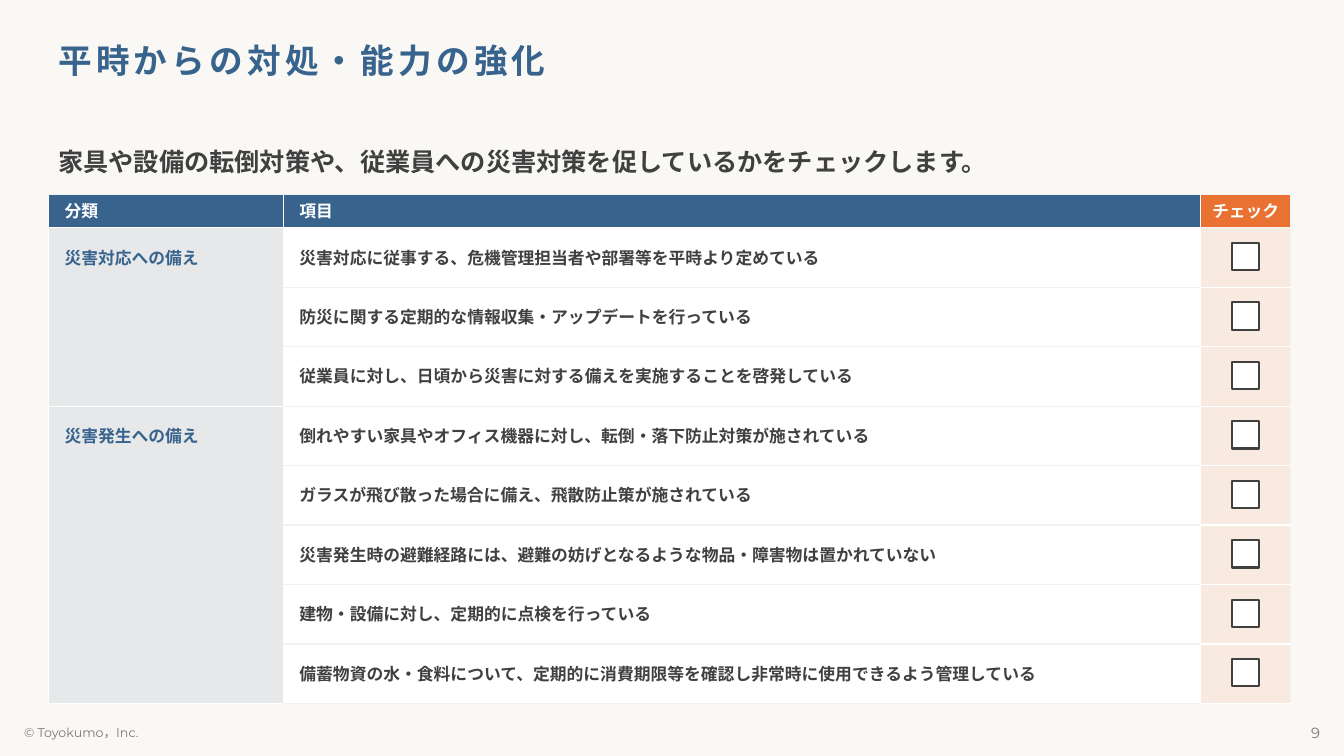
from dataclasses import dataclass

from lxml.etree import SubElement
from pptx import Presentation
from pptx.dml.color import RGBColor
from pptx.enum.shapes import MSO_SHAPE
from pptx.enum.text import MSO_ANCHOR, PP_ALIGN
from pptx.oxml.ns import qn
from pptx.util import Inches, Pt


@dataclass(frozen=True)
class Theme:
    font: str = "Montserrat"
    page: str = "FAF8F4"
    blue: str = "37638D"
    orange: str = "E97132"
    ink: str = "404040"
    grey: str = "797979"
    rule: str = "F2F2F2"
    white: str = "FFFFFF"
    title: float = 24
    lead: float = 18
    body: float = 12
    page_number: float = 10.5
    small: float = 9
    tint: int = 10


T = Theme()
WIDTH, HEIGHT = 13.33, 7.5
LEFT, TABLE_TOP = 0.48, 1.93
COLUMNS = [2.33, 9.1, 0.89]
HEADER_ROW, ROW = 0.33, 0.59
BOX = 0.27
GROUPS = {
    "災害対応への備え": [
        "災害対応に従事する、危機管理担当者や部署等を平時より定めている",
        "防災に関する定期的な情報収集・アップデートを行っている",
        "従業員に対し、日頃から災害に対する備えを実施することを啓発している",
    ],
    "災害発生への備え": [
        "倒れやすい家具やオフィス機器に対し、転倒・落下防止対策が施されている",
        "ガラスが飛び散った場合に備え、飛散防止策が施されている",
        "災害発生時の避難経路には、避難の妨げとなるような物品・障害物は置かれていない",
        "建物・設備に対し、定期的に点検を行っている",
        "備蓄物資の水・食料について、定期的に消費期限等を確認し非常時に使用できるよう管理している",
    ],
}


def rgb(color):
    return RGBColor.from_string(color)


def write(tf, text, size, color, bold=True, align=PP_ALIGN.LEFT, spacing=None):
    tf.text = text
    p = tf.paragraphs[0]
    p.alignment = align
    for r in p.runs:
        r.font.name, r.font.size, r.font.bold = T.font, Pt(size), bold
        r.font.color.rgb = rgb(color)
        rPr = r.font._element
        SubElement(rPr, qn("a:ea")).set("typeface", T.font)
        rPr.set("lang", "ja-JP")
        if spacing:
            rPr.set("spc", str(spacing * 100))
    return p


def add_text(s, text, at, size, color, **style):
    tf = s.shapes.add_textbox(*map(Inches, at)).text_frame
    tf.word_wrap = True
    tf.vertical_anchor = MSO_ANCHOR.MIDDLE
    return tf, write(tf, text, size, color, **style)


def add_box(s, x, y):
    sp = s.shapes.add_shape(MSO_SHAPE.ROUNDED_RECTANGLE, *map(Inches, (x, y, BOX, BOX)))
    sp.adjustments[0] = 0
    sp.shadow.inherit = False
    sp.fill.solid()
    sp.fill.fore_color.rgb = rgb(T.white)
    sp.line.color.rgb = rgb(T.ink)
    sp.line.width = Pt(1.5)


def style_cell(cell, fill, borders, tint=None):
    tcPr = cell._tc.get_or_add_tcPr()
    for side, color in zip("LRTB", borders):
        ln = SubElement(tcPr, qn(f"a:ln{side}"), w=str(Pt(1)))
        SubElement(SubElement(ln, qn("a:solidFill")), qn("a:srgbClr"), val=color)
    cell.fill.solid()
    cell.fill.fore_color.rgb = rgb(fill)
    if tint:
        color = tcPr.find(qn("a:solidFill")).find(qn("a:srgbClr"))
        SubElement(color, qn("a:alpha"), val=str(tint * 1000))


def write_cell(cell, text, color, margins, anchor=MSO_ANCHOR.MIDDLE, **style):
    cell.margin_left, cell.margin_top, cell.margin_right, cell.margin_bottom = map(Inches, margins)
    cell.vertical_anchor = anchor
    write(cell.text_frame, text, T.body, color, **style)


def add_header(table):
    fills = [T.blue, T.blue, T.orange]
    aligns = [PP_ALIGN.LEFT, PP_ALIGN.LEFT, PP_ALIGN.CENTER]
    for c, text in enumerate(["分類", "項目", "チェック"]):
        cell = table.cell(0, c)
        edge = T.rule if c == 2 else T.white
        style_cell(cell, fills[c], [T.white, edge, T.rule, edge])
        left = 0.1 if c == 2 else 0.16
        write_cell(cell, text, T.white, (left, 0.05, 0.1, 0.05), align=aligns[c])


def add_group(table, first, name, items):
    for r, item in enumerate(items, first):
        category, detail, check = (table.cell(r, c) for c in range(3))
        style_cell(category, T.blue, [T.white] * 4, T.tint)
        top = T.white if r == 1 else T.rule
        style_cell(detail, T.white, [T.white, T.white, top, T.rule])
        write_cell(detail, item, T.ink, (0.16, 0.01, 0.01, 0))
        top = T.rule if r == 1 else T.white
        style_cell(check, T.orange, [T.white, T.rule, top, T.white], T.tint)
    head = table.cell(first, 0)
    head.merge(table.cell(first + len(items) - 1, 0))
    write_cell(head, name, T.blue, (0.16, 0.2, 0.01, 0), MSO_ANCHOR.TOP)


def add_checklist(s):
    count = sum(map(len, GROUPS.values()))
    size = (sum(COLUMNS), HEADER_ROW + count * ROW)
    frame = s.shapes.add_table(count + 1, 3, *map(Inches, (LEFT, TABLE_TOP, *size)))
    table = frame.table
    table.first_row = table.horz_banding = False
    for column, width in zip(table.columns, COLUMNS):
        column.width = Inches(width)
    for i, row in enumerate(table.rows):
        row.height = Inches(ROW if i else HEADER_ROW)
    add_header(table)
    first = 1
    for name, items in GROUPS.items():
        add_group(table, first, name, items)
        first += len(items)
    box_left = LEFT + sum(COLUMNS) - (COLUMNS[2] + BOX) / 2
    box_top = TABLE_TOP + HEADER_ROW + 0.15
    for i in range(count):
        add_box(s, box_left, box_top + i * ROW)


def main():
    prs = Presentation()
    prs.slide_width, prs.slide_height = Inches(WIDTH), Inches(HEIGHT)
    s = prs.slides.add_slide(prs.slide_layouts[6])
    s.background.fill.solid()
    s.background.fill.fore_color.rgb = rgb(T.page)

    content = WIDTH - 2 * LEFT
    tf, p = add_text(s, "平時からの対処・能力の強化", (LEFT, 0.28, content, 0.66),
                     T.title, T.blue, spacing=3)
    tf.margin_top = Inches(0.08)
    p.line_spacing = 0.9
    add_text(s, "家具や設備の転倒対策や、従業員への災害対策を促しているかをチェックします。",
             (LEFT, 1.27, content, 0.66), T.lead, T.ink)
    add_checklist(s)
    add_text(s, "© Toyokumo，Inc.", (0.14, 7.13, 3.92, 0.27), T.small, T.grey, bold=False)
    add_text(s, "9", (WIDTH - 3.14, 7.13, 3, 0.27), T.page_number, T.grey,
             bold=False, align=PP_ALIGN.RIGHT)
    prs.save("out.pptx")


if __name__ == "__main__":
    main()
